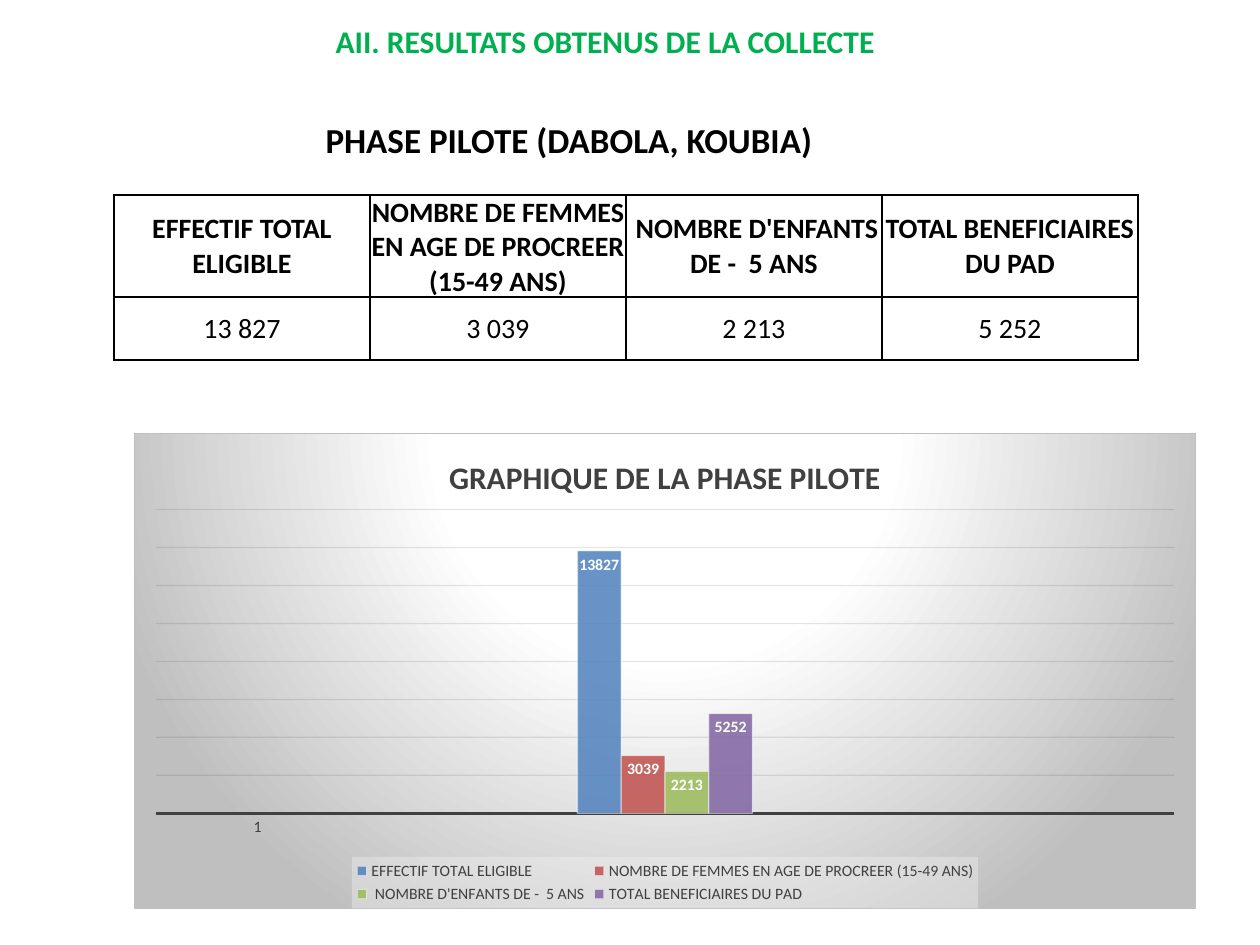
from dataclasses import dataclass

from lxml.etree import SubElement
from pptx import Presentation
from pptx.chart.data import CategoryChartData
from pptx.dml.color import RGBColor
from pptx.enum.chart import XL_CHART_TYPE as ChartType
from pptx.enum.chart import XL_LABEL_POSITION as LabelPos
from pptx.enum.chart import XL_LEGEND_POSITION as LegendPos
from pptx.enum.chart import XL_TICK_MARK as TickMark
from pptx.enum.text import MSO_ANCHOR as Anchor
from pptx.enum.text import MSO_AUTO_SIZE as AutoSize
from pptx.enum.text import PP_ALIGN as Align
from pptx.oxml import parse_xml
from pptx.oxml.ns import nsdecls, qn
from pptx.util import Emu, Pt


@dataclass(frozen=True)
class Theme:
    font: str = "Calibri"
    heading: str = "00B050"
    ink: str = "000000"
    chart_ink: str = "404040"
    grid: str = "0D0D0D"
    shade: str = "BFBFBF"
    legend: str = "F2F2F2"
    white: str = "FFFFFF"
    bars: tuple = ("4F81BD", "C0504D", "9BBB59", "8064A2")
    subtitle_size: int = 20
    title_size: int = 18
    table_size: int = 16
    chart_size: int = 9


THEME = Theme()
RESULTS = (
    ("EFFECTIF TOTAL ELIGIBLE", 13827),
    ("NOMBRE DE FEMMES EN AGE DE PROCREER (15-49 ANS)", 3039),
    (" NOMBRE D'ENFANTS DE -  5 ANS", 2213),
    ("TOTAL BENEFICIAIRES DU PAD", 5252),
)


def px(length):
    return Emu(round(length * 914400 / 126))


def box(left, top, width, height):
    return px(left), px(top), px(width), px(height)


def style_font(font, size, color, bold=False):
    font.name = THEME.font
    font.size = Pt(size)
    font.bold = bold
    font.color.rgb = RGBColor.from_string(color)


def write(frame, text, size, color=THEME.ink, bold=False, align=Align.CENTER):
    paragraph = frame.paragraphs[0]
    paragraph.alignment = align
    run = paragraph.add_run()
    run.text = text
    style_font(run.font, size, color, bold)


def paint(fill, color, opacity=100):
    fill.solid()
    fill.fore_color.rgb = RGBColor.from_string(color)
    if opacity < 100:
        color_node = fill._xPr.find(qn("a:solidFill"))[0]
        SubElement(color_node, qn("a:alpha"), val=str(opacity * 1000))


def draw_line(line, color, width, opacity=100):
    paint(line.fill, color, opacity)
    line.width = Pt(width)


def add_title(slide, text):
    title = slide.shapes.title
    title.left, title.top, title.width, title.height = box(323, 16, 570, 50)
    frame = title.text_frame
    frame.word_wrap = False
    frame.auto_size = AutoSize.NONE
    frame.vertical_anchor = Anchor.TOP
    write(frame, text, THEME.title_size, THEME.heading, True, Align.LEFT)


def add_subtitle(slide, text):
    frame = slide.shapes.add_textbox(*box(0, 112, 1138, 55)).text_frame
    frame.word_wrap = True
    write(frame, text, THEME.subtitle_size, bold=True)


def add_borders(cell):
    properties = cell._tc.get_or_add_tcPr()
    for index, side in enumerate(("lnL", "lnR", "lnT", "lnB")):
        properties.insert(index, parse_xml(
            f'<a:{side} {nsdecls("a")} w="12700"><a:solidFill>'
            f'<a:srgbClr val="{THEME.ink}"/></a:solidFill></a:{side}>'))


def add_results_table(slide):
    row_heights = (102, 63)
    table = slide.shapes.add_table(
        2, len(RESULTS), *box(114, 195, 1024, sum(row_heights))).table
    table.first_row = table.horz_banding = False
    for row, height in zip(table.rows, row_heights):
        row.height = px(height)
    for column, (label, count) in enumerate(RESULTS):
        table.columns[column].width = px(256)
        figure = f"{count:,}".replace(",", " ")
        for row, text in enumerate((label, figure)):
            cell = table.cell(row, column)
            cell.margin_left = cell.margin_right = cell.margin_top = px(1)
            cell.margin_bottom = 0
            cell.vertical_anchor = Anchor.MIDDLE
            cell.fill.background()
            add_borders(cell)
            write(cell.text_frame, text, THEME.table_size, bold=row == 0)


def shade_chart(chart):
    """Give the chart area its radial gradient and thin border."""
    stops = "".join(
        f'<a:gs pos="{place * 1000}"><a:srgbClr val="{color}"/></a:gs>'
        for place, color in ((0, THEME.white), (39, THEME.white), (100, THEME.shade)))
    chart._chartSpace.find(qn("c:chart")).addnext(parse_xml(
        f'<c:spPr {nsdecls("c", "a")}><a:gradFill><a:gsLst>{stops}</a:gsLst>'
        '<a:path path="circle"><a:fillToRect l="50000" t="-80000" r="50000" b="180000"/>'
        f'</a:path></a:gradFill><a:ln w="9525"><a:solidFill><a:srgbClr val="{THEME.shade}"/>'
        '</a:solidFill></a:ln></c:spPr>'))


def place_plot(chart):
    """Fix the inner plot area as fractions of the chart."""
    plot_area = chart._chartSpace.find(qn("c:chart")).find(qn("c:plotArea"))
    for layout in plot_area.findall(qn("c:layout")):
        plot_area.remove(layout)
    fractions = "".join(
        f'<c:{name} val="{value}"/>'
        for name, value in (("x", 0.02), ("y", 0.16), ("w", 0.96), ("h", 0.64)))
    plot_area.insert(0, parse_xml(
        f'<c:layout {nsdecls("c")}><c:manualLayout><c:layoutTarget val="inner"/>'
        f'<c:xMode val="edge"/><c:yMode val="edge"/>{fractions}'
        '</c:manualLayout></c:layout>'))


def style_axes(chart):
    categories, values = chart.category_axis, chart.value_axis
    categories.major_tick_mark = categories.minor_tick_mark = TickMark.NONE
    style_font(categories.tick_labels.font, THEME.chart_size, THEME.chart_ink)
    draw_line(categories.format.line, THEME.chart_ink, 1.5)
    values.visible = False
    values.minimum_scale, values.maximum_scale, values.major_unit = 0, 16000, 2000
    draw_line(values.major_gridlines.format.line, THEME.grid, 0.75, 10)


def style_legend(chart):
    chart.has_legend = True
    legend = chart.legend
    legend.position = LegendPos.BOTTOM
    legend.include_in_layout = False
    style_font(legend.font, THEME.chart_size, THEME.chart_ink)
    legend._element.find(qn("c:txPr")).addprevious(parse_xml(
        f'<c:spPr {nsdecls("c", "a")}><a:solidFill><a:srgbClr val="{THEME.legend}">'
        '<a:alpha val="39000"/></a:srgbClr></a:solidFill></c:spPr>'))


def add_results_chart(slide, title):
    data = CategoryChartData()
    data.categories = ["1", "", "", "", ""]
    for label, count in RESULTS:
        data.add_series(label, (None, None, count, None, None))
    chart = slide.shapes.add_chart(
        ChartType.COLUMN_CLUSTERED, *box(134, 433, 1062, 476), data).chart
    style_font(chart.font, 10, THEME.ink)
    chart.has_title = True
    write(chart.chart_title.text_frame, title, THEME.title_size, THEME.chart_ink, True)
    plot = chart.plots[0]
    plot.gap_width, plot.overlap = 65, 0
    plot.vary_by_categories = False
    for series, color in zip(plot.series, THEME.bars):
        paint(series.format.fill, color, 85)
        draw_line(series.format.line, THEME.white, 0.75, 50)
        labels = series.data_labels
        labels.show_value = True
        labels.position = LabelPos.INSIDE_END
        style_font(labels.font, THEME.chart_size, THEME.white, True)
    style_axes(chart)
    style_legend(chart)
    shade_chart(chart)
    place_plot(chart)


def main():
    deck = Presentation()
    deck.slide_width, deck.slide_height = px(1260), px(945)
    slide = deck.slides.add_slide(deck.slide_layouts[5])
    add_subtitle(slide, "PHASE PILOTE (DABOLA, KOUBIA)")
    add_results_table(slide)
    add_results_chart(slide, "GRAPHIQUE DE LA PHASE PILOTE")
    add_title(slide, "AII. RESULTATS OBTENUS DE LA COLLECTE")
    deck.save("out.pptx")


if __name__ == "__main__":
    main()
